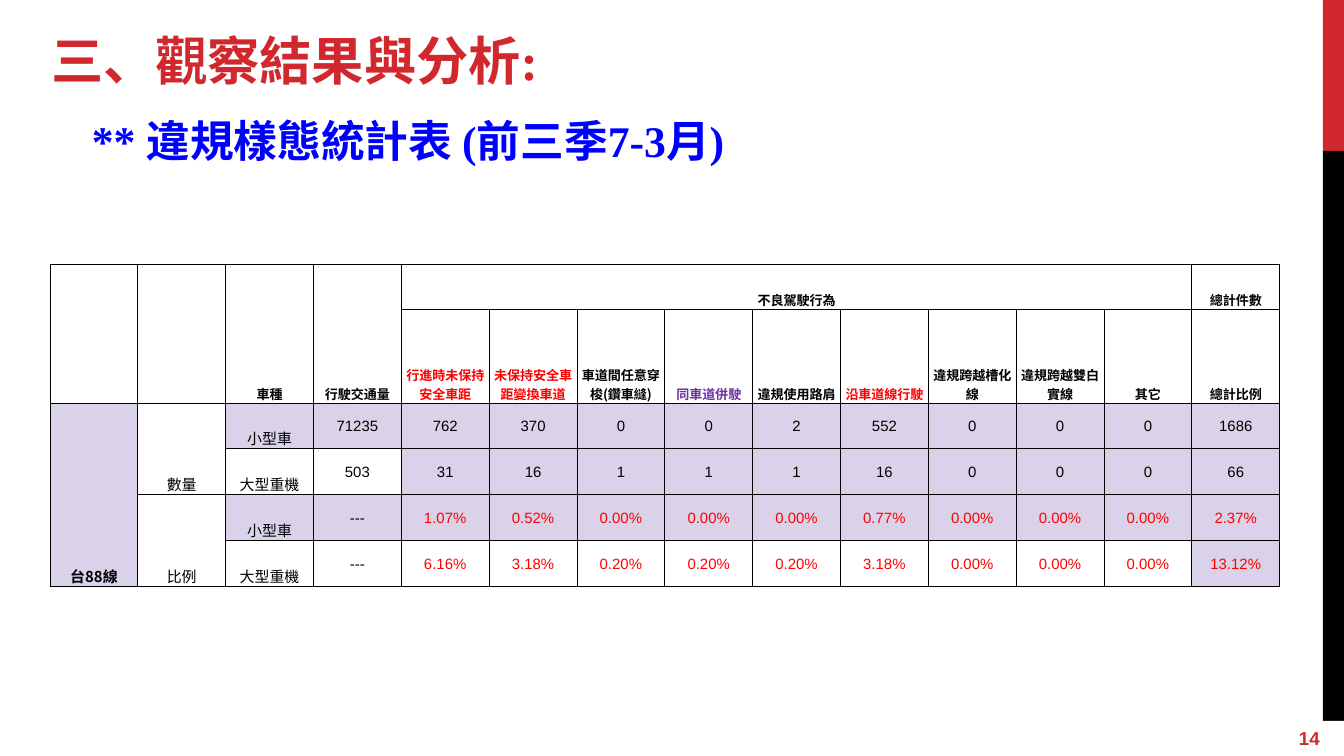
from lxml import etree
from pptx import Presentation
from pptx.dml.color import RGBColor
from pptx.enum.shapes import MSO_SHAPE
from pptx.enum.text import MSO_ANCHOR, MSO_AUTO_SIZE, PP_ALIGN
from pptx.oxml.ns import qn
from pptx.util import Pt

RECT = MSO_SHAPE.RECTANGLE
TOP, MIDDLE, BOTTOM = MSO_ANCHOR.TOP, MSO_ANCHOR.MIDDLE, MSO_ANCHOR.BOTTOM
LEFT, CENTER = PP_ALIGN.LEFT, PP_ALIGN.CENTER
NO_AUTOFIT = MSO_AUTO_SIZE.NONE

CRIMSON = RGBColor(0xD1, 0x28, 0x2E)
BLACK = RGBColor(0, 0, 0)
WHITE = RGBColor(0xFF, 0xFF, 0xFF)
BLUE = RGBColor(0, 0, 0xFF)
RED = RGBColor(0xFF, 0, 0)
PURPLE = RGBColor(0x70, 0x30, 0xA0)
LILAC = RGBColor(0xD9, 0xD2, 0xE9)

SANS, SERIF, CJK = "Arial", "Times New Roman", "Noto Sans CJK TC"
EMU_PER_PX = 914400 / 134.4
INSET = 13

ROW_HEIGHTS = [45, 94, 46, 46, 46, 46]
ROWS = [
    ["", "", "車種", "行駛交通量", "不良駕駛行為"] + [""] * 8 + ["總計件數"],
    ["", "", "", "", "行進時未保持安全車距", "未保持安全車距變換車道",
     "車道間任意穿梭(鑽車縫)", "同車道併駛", "違規使用路肩", "沿車道線行駛",
     "違規跨越槽化線", "違規跨越雙白實線", "其它", "總計比例"],
    ["台88線", "數量", "小型車", "71235", "762", "370", "0", "0", "2", "552",
     "0", "0", "0", "1686"],
    ["", "", "大型重機", "503", "31", "16", "1", "1", "1", "16",
     "0", "0", "0", "66"],
    ["", "比例", "小型車", "---", "1.07%", "0.52%", "0.00%", "0.00%", "0.00%",
     "0.77%", "0.00%", "0.00%", "0.00%", "2.37%"],
    ["", "", "大型重機", "---", "6.16%", "3.18%", "0.20%", "0.20%", "0.20%",
     "3.18%", "0.00%", "0.00%", "0.00%", "13.12%"],
]
MERGES = [((0, col), (1, col)) for col in range(4)] + [
    ((0, 4), (0, 12)), ((2, 0), (5, 0)), ((2, 1), (3, 1)), ((4, 1), (5, 1))]
HEADER_COLORS = {4: RED, 5: RED, 7: PURPLE, 9: RED}


def px(n):
    return round(n * EMU_PER_PX)


def set_font(p, name, size, color, bold):
    font = p.font
    font.name, font.size, font.bold = name, Pt(size), bold
    font.color.rgb = color
    etree.SubElement(font._rPr, qn("a:ea"), typeface=CJK)


def set_text(s, text, name, size, color, anchor=TOP, left=INSET):
    tf = s.text_frame
    tf.word_wrap = True
    tf.auto_size = NO_AUTOFIT
    tf.vertical_anchor = anchor
    tf.margin_left = px(left)
    tf.margin_top = tf.margin_right = tf.margin_bottom = px(INSET)
    p = tf.paragraphs[0]
    p.text = text
    p.alignment = LEFT
    set_font(p, name, size, color, True)


def add_rect(slide, x, y, w, h, color):
    s = slide.shapes.add_shape(RECT, px(x), px(y), px(w), px(h))
    s.shadow.inherit = False
    s.fill.solid()
    s.fill.fore_color.rgb = color
    s.line.fill.background()
    return s


def add_title(slide, text):
    s = slide.shapes.title
    s.left, s.top, s.width, s.height = px(38), px(15), px(1250), px(85)
    set_text(s, text, SERIF, 28, CRIMSON)


def add_subtitle(slide, text):
    s = slide.shapes.add_textbox(px(35), px(101), px(1253), px(85))
    set_text(s, text, SERIF, 23.4, BLUE, left=57)


def add_borders(cell):
    tc_pr = cell._tc.get_or_add_tcPr()
    for side in ("a:lnL", "a:lnR", "a:lnT", "a:lnB"):
        ln = etree.SubElement(tc_pr, qn(side), w=str(Pt(0.5)))
        fill = etree.SubElement(ln, qn("a:solidFill"))
        etree.SubElement(fill, qn("a:srgbClr"), val=str(BLACK))


def text_color(row, col):
    if row == 1:
        return HEADER_COLORS.get(col, BLACK)
    return RED if row >= 4 and col >= 4 else BLACK


def is_shaded(row, col):
    if row < 2:
        return False
    if col < 2:
        return col == 0
    return row in (2, 4) or (row == 3 and col >= 4) or (row, col) == (5, 13)


def format_cell(cell, row, col, text):
    add_borders(cell)
    if is_shaded(row, col):
        cell.fill.solid()
        cell.fill.fore_color.rgb = LILAC
    else:
        cell.fill.background()
    numeric = row >= 2 and col >= 3
    cell.margin_left = cell.margin_right = cell.margin_top = px(1)
    cell.margin_bottom = 0
    cell.vertical_anchor = MIDDLE if numeric else BOTTOM
    p = cell.text_frame.paragraphs[0]
    if text:
        p.text = text
    p.alignment = CENTER
    set_font(p, SANS if numeric else CJK, 7 if row < 2 else 8,
             text_color(row, col), row < 2 or col == 0)


def add_violation_table(slide):
    n_cols = len(ROWS[0])
    frame = slide.shapes.add_table(len(ROWS), n_cols, px(50), px(264),
                                   px(1230), px(sum(ROW_HEIGHTS)))
    table = frame.table
    table.first_row = table.horz_banding = False
    for column in table.columns:
        column.width = px(1230) // n_cols
    for r, (height, values) in enumerate(zip(ROW_HEIGHTS, ROWS)):
        table.rows[r].height = px(height)
        for c, text in enumerate(values):
            format_cell(table.cell(r, c), r, c, text)
    for first, last in MERGES:
        table.cell(*first).merge(table.cell(*last))


def main():
    prs = Presentation()
    prs.slide_width, prs.slide_height = px(1344), px(756)
    slide = prs.slides.add_slide(prs.slide_layouts[5])
    add_rect(slide, 1323, 0, 21, 151, CRIMSON)
    add_rect(slide, 1323, 151, 21, 605, BLACK)
    page = add_rect(slide, 1286, 721, 58, 35, WHITE)
    set_text(page, "14", SANS, 10, CRIMSON, anchor=MIDDLE)
    add_subtitle(slide, "** 違規樣態統計表 (前三季7-3月)")
    add_title(slide, "三、觀察結果與分析:")
    add_violation_table(slide)
    prs.save("out.pptx")


if __name__ == "__main__":
    main()
